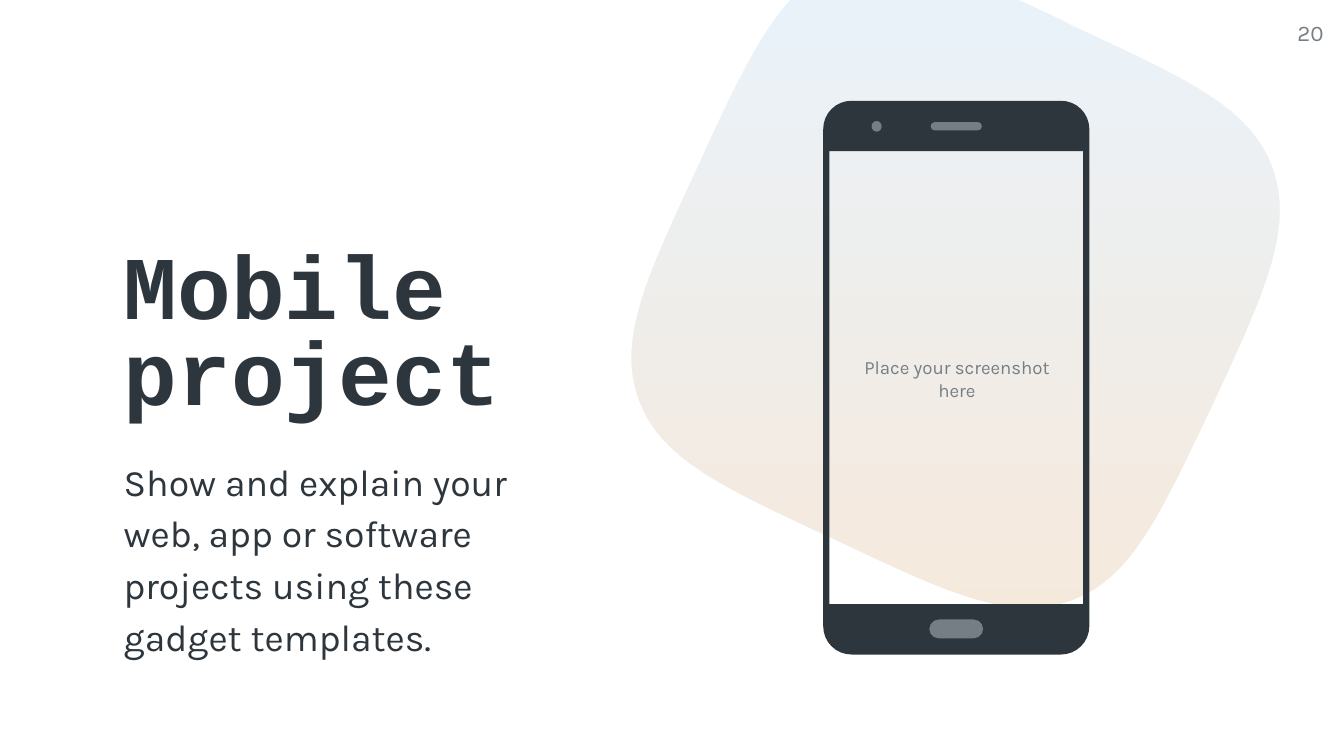
from dataclasses import dataclass
from math import cos, radians, sin
from typing import NamedTuple

from pptx import Presentation
from pptx.dml.color import RGBColor
from pptx.enum.shapes import MSO_SHAPE as SHAPE
from pptx.enum.text import MSO_ANCHOR as ANCHOR, MSO_AUTO_SIZE as AUTOSIZE, PP_ALIGN as ALIGN
from pptx.util import Pt

PX = 4572
WIDTH, HEIGHT = 2000, 1125
Point = tuple[float, float]


class Box(NamedTuple):
    left: int
    top: int
    width: int
    height: int


@dataclass(frozen=True)
class Theme:
    white: str = "FFFFFF"
    sky: str = "E9F2F9"
    sand: str = "F8E7D5"
    ink: str = "2E363D"
    grey: str = "767E85"
    mono: str = "Courier New"
    sans: str = "Karla"
    title: int = 48
    body: int = 20
    number: int = 12
    hint: int = 10


@dataclass(frozen=True)
class Detail:
    kind: SHAPE
    box: Box


THEME = Theme()

BLOB_START = (1516, 0)
BLOB_CURVES = (
    ((1542, 12), (1570, 24), (1600, 40)),
    ((1768, 118), (1862, 160), (1894, 250)),
    ((1926, 340), (1884, 432), (1806, 600)),
    ((1726, 768), (1684, 862), (1594, 894)),
    ((1504, 926), (1412, 884), (1244, 804)),
    ((1076, 726), (982, 684), (950, 594)),
    ((918, 504), (962, 412), (1040, 244)),
    ((1092, 130), (1130, 50), (1176, 0)),
)
SLIDE_CORNERS = [(0, 0), (0, HEIGHT), (WIDTH, HEIGHT), (WIDTH, 0)]

PHONE = Box(1225, 150, 396, 824)
PHONE_RADIUS = 42
SCREEN = Box(1234, 225, 378, 674)
PHONE_DETAILS = (
    Detail(SHAPE.ROUNDED_RECTANGLE, Box(1383, 922, 80, 28)),
    Detail(SHAPE.OVAL, Box(1297, 180, 15, 16)),
    Detail(SHAPE.ROUNDED_RECTANGLE, Box(1385, 182, 76, 12)),
)


def curve_points(start: Point, curves: tuple, steps: int = 16) -> list[Point]:
    """Return points along a chain of cubic curves."""
    points = [start]
    for c1, c2, end in curves:
        p0 = points[-1]
        for i in range(1, steps + 1):
            t = i / steps
            u = 1 - t
            points.append(tuple(
                u**3 * a + 3 * u * u * t * b + 3 * u * t * t * c + t**3 * d
                for a, b, c, d in zip(p0, c1, c2, end)))
    return points


def rect_points(box: Box, radius: int = 0, steps: int = 8) -> list[Point]:
    """Return the outline of a rectangle, with rounded corners if a radius is given."""
    x1, y1 = box.left + radius, box.top + radius
    x2, y2 = box.left + box.width - radius, box.top + box.height - radius
    corners = ((x2, y2), (x1, y2), (x1, y1), (x2, y1))
    count = steps if radius else 0
    return [
        (x + radius * cos(a), y + radius * sin(a))
        for quarter, (x, y) in enumerate(corners)
        for a in (radians(90 * (quarter + i / max(count, 1))) for i in range(count + 1))
    ]


def paint(sp, color: str) -> None:
    """Give a shape a plain fill without line or shadow."""
    sp.fill.solid()
    sp.fill.fore_color.rgb = RGBColor.from_string(color)
    sp.line.fill.background()
    sp.shadow.inherit = False


def add_outline(s, contours: list[list[Point]], color: str):
    """Draw one filled freeform from closed contours; inner ones become holes."""
    scaled = [[(x * PX, y * PX) for x, y in contour] for contour in contours]
    builder = s.shapes.build_freeform(*scaled[0][0], scale=1.0)
    builder.add_line_segments(scaled[0][1:], close=True)
    for contour in scaled[1:]:
        builder.move_to(*contour[0])
        builder.add_line_segments(contour[1:], close=True)
    sp = builder.convert_to_shape()
    paint(sp, color)
    return sp


def add_detail(s, detail: Detail) -> None:
    """Draw a grey button, camera or speaker."""
    sp = s.shapes.add_shape(detail.kind, *(v * PX for v in detail.box))
    if detail.kind == SHAPE.ROUNDED_RECTANGLE:
        sp.adjustments[0] = 0.5
    paint(sp, THEME.grey)


def place(sp, box: Box, *, anchor: ANCHOR = ANCHOR.TOP, inset: int = 0):
    """Position a text shape and return its frame, set to wrap."""
    sp.left, sp.top, sp.width, sp.height = (v * PX for v in box)
    tf = sp.text_frame
    tf.word_wrap = True
    tf.auto_size = AUTOSIZE.NONE
    tf.vertical_anchor = anchor
    tf.margin_left = tf.margin_right = tf.margin_top = tf.margin_bottom = inset * PX
    return tf


def write(p, text: str, *, size: int, color: str, font: str = THEME.sans, bold: bool = False,
          align: ALIGN = ALIGN.LEFT, spacing: float = 1.0, gap: int = 0) -> None:
    """Fill a paragraph with formatted text."""
    p.text = text
    p.alignment = align
    p.line_spacing = spacing
    p.space_before = p.space_after = Pt(gap)
    for r in p.runs:
        r.font.name = font
        r.font.size = Pt(size)
        r.font.bold = bold
        r.font.color.rgb = RGBColor.from_string(color)


def add_background(s) -> None:
    """Fill the background with a vertical gradient and mask it around the blob."""
    fill = s.background.fill
    fill.gradient()
    fill.gradient_angle = 270
    for stop, color in zip(fill.gradient_stops, (THEME.sky, THEME.sand)):
        stop.color.rgb = RGBColor.from_string(color)
    mask = add_outline(s, [curve_points(BLOB_START, BLOB_CURVES) + SLIDE_CORNERS], THEME.white)
    s.shapes.title.element.addprevious(mask.element)


def add_texts(s) -> None:
    """Write the heading with its description, the screen hint and the page number."""
    tf = place(s.shapes.title, Box(184, 180, 658, 800), anchor=ANCHOR.BOTTOM)
    write(tf.paragraphs[0], "Mobile\vproject", size=THEME.title, color=THEME.ink,
          font=THEME.mono, bold=True, spacing=0.8)
    write(tf.add_paragraph(),
          "Show and explain your web, app or software projects using these gadget templates.",
          size=THEME.body, color=THEME.ink, spacing=1.15, gap=16)

    tf = place(s.shapes.add_textbox(0, 0, 0, 0), Box(1236, 228, 376, 670),
               anchor=ANCHOR.MIDDLE, inset=20)
    write(tf.paragraphs[0], "Place your screenshot here", size=THEME.hint, color=THEME.grey,
          align=ALIGN.CENTER)

    tf = place(s.shapes.add_textbox(0, 0, 0, 0), Box(1850, 28, 120, 86))
    write(tf.paragraphs[0], "20", size=THEME.number, color=THEME.grey, align=ALIGN.RIGHT)


def add_phone(s) -> None:
    """Draw the phone frame with an open screen and its details."""
    add_outline(s, [rect_points(PHONE, PHONE_RADIUS), rect_points(SCREEN)], THEME.ink)
    for detail in PHONE_DETAILS:
        add_detail(s, detail)


def main() -> None:
    """Build the slide and save it."""
    prs = Presentation()
    prs.slide_width, prs.slide_height = WIDTH * PX, HEIGHT * PX
    s = prs.slides.add_slide(prs.slide_layouts[5])
    add_background(s)
    add_texts(s)
    add_phone(s)
    prs.save("out.pptx")


if __name__ == "__main__":
    main()
